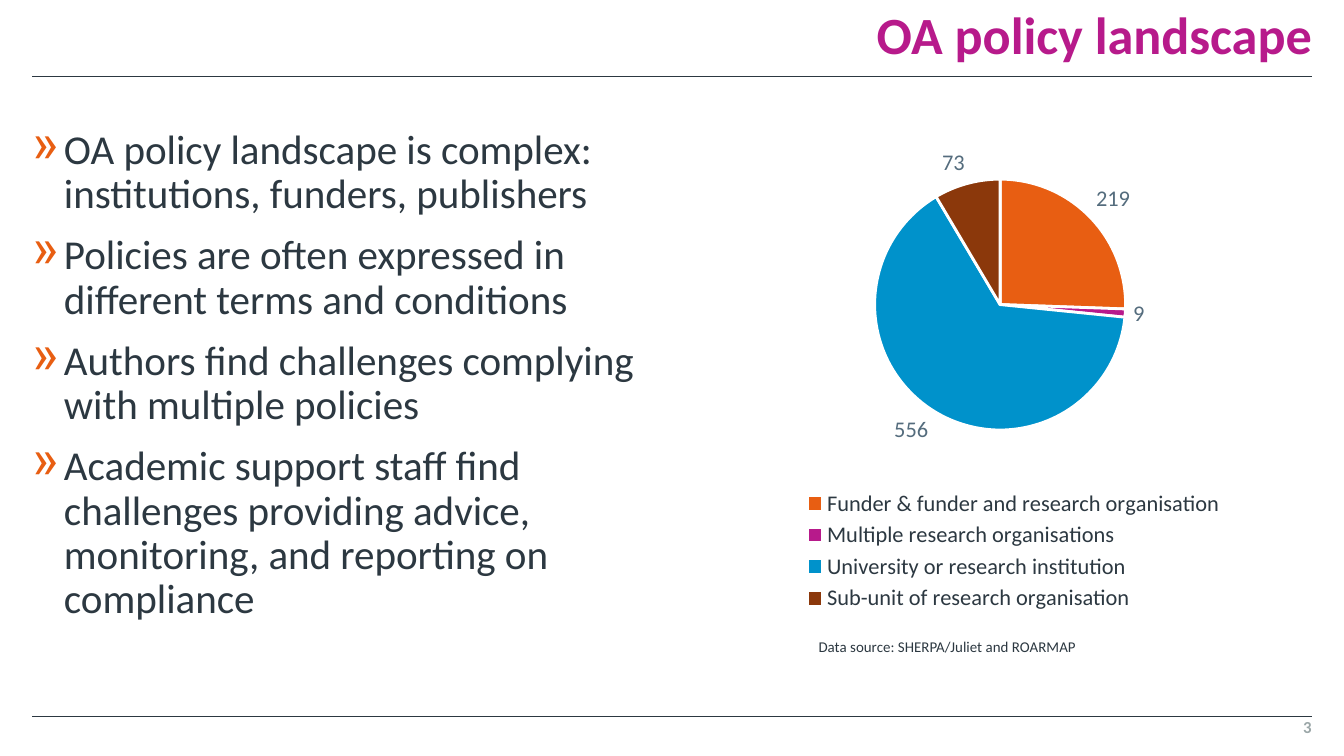
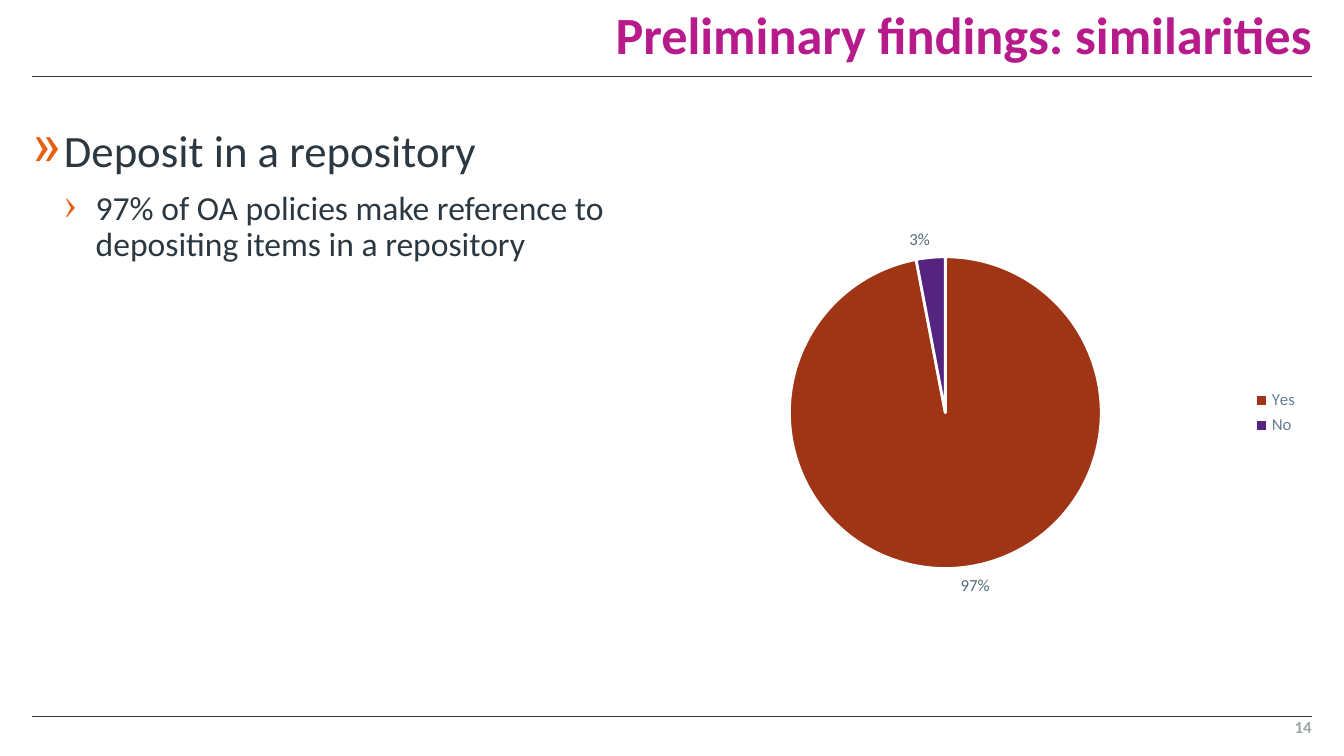
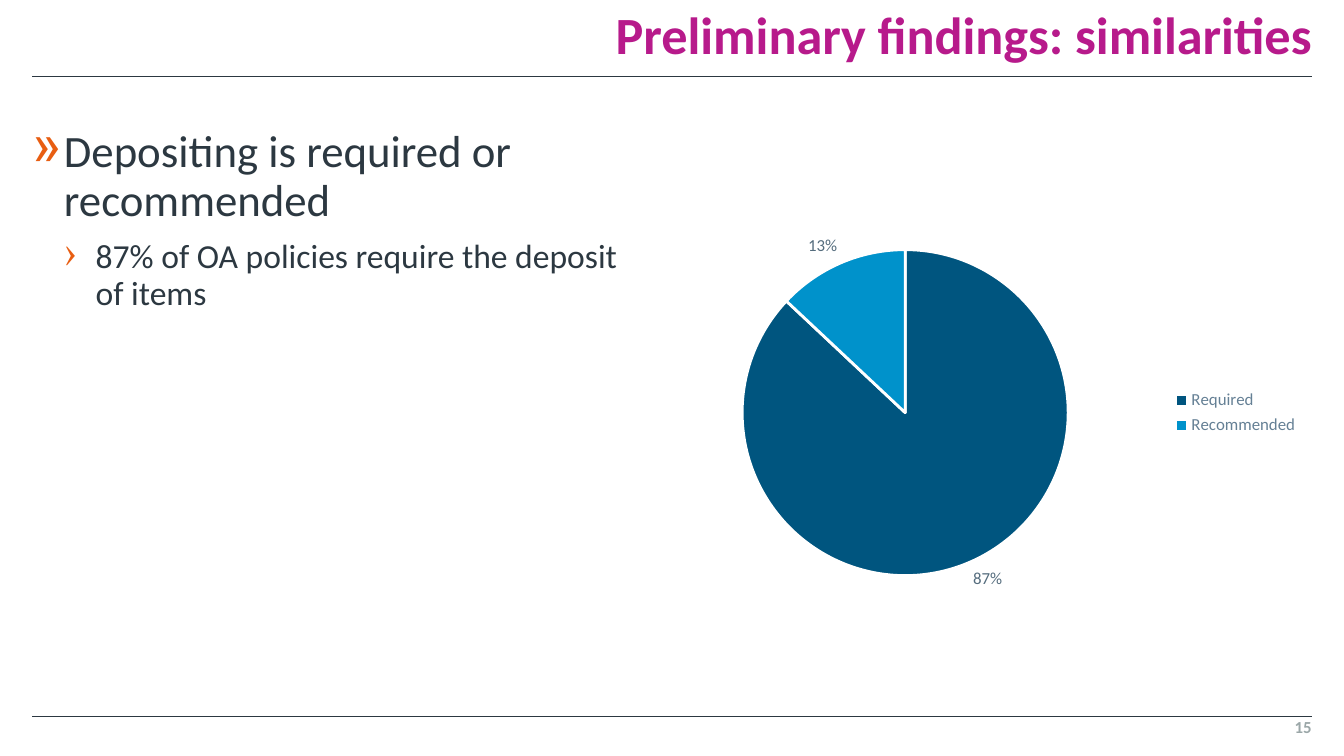
from lxml import etree
from pptx import Presentation
from pptx.chart.data import CategoryChartData
from pptx.dml.color import RGBColor
from pptx.enum.chart import XL_CHART_TYPE, XL_LABEL_POSITION, XL_LEGEND_POSITION
from pptx.enum.shapes import MSO_CONNECTOR
from pptx.enum.text import MSO_ANCHOR, PP_ALIGN
from pptx.oxml.ns import qn
from pptx.util import Cm, Pt

PIE = XL_CHART_TYPE.PIE
OUTSIDE_END = XL_LABEL_POSITION.OUTSIDE_END
LEGEND_BOTTOM = XL_LEGEND_POSITION.BOTTOM
LEGEND_RIGHT = XL_LEGEND_POSITION.RIGHT
STRAIGHT = MSO_CONNECTOR.STRAIGHT
TOP, MIDDLE, BOTTOM = MSO_ANCHOR.TOP, MSO_ANCHOR.MIDDLE, MSO_ANCHOR.BOTTOM
LEFT, RIGHT = PP_ALIGN.LEFT, PP_ALIGN.RIGHT

FONT = "Calibri"
INK, MAGENTA, ORANGE, BLUE = "2C3841", "B71A8B", "E85E12", "0092CB"
BROWN, RUST, PURPLE, NAVY = "8B380B", "9F3515", "552481", "00557F"
LABEL_GREY, LEGEND_GREY, NUMBER_GREY, WHITE = "546C7D", "658095", "9BA7A8", "FFFFFF"
MARGIN_LEFT, MARGIN_RIGHT = 0.61, 24.79
INDENT = 0.6
BULLETS = (("»", 9), ("›", 7.5))
FINDING_CHART = (12.09, 3.99, 12.7, 7.62)


def color(hex_string):
    """Return the colour for a hex string."""
    return RGBColor.from_string(hex_string)


def set_font(font, size, hex_string, bold=False):
    """Apply the deck font with a size, colour and weight."""
    font.name = FONT
    font.size = Pt(size)
    font.bold = bold
    font.color.rgb = color(hex_string)


def write(paragraph, text, size=22, hex_string=INK, bold=False, align=LEFT, spacing=0.9):
    """Fill a paragraph with formatted text."""
    paragraph.alignment = align
    paragraph.line_spacing = spacing
    run = paragraph.add_run()
    run.text = text
    set_font(run.font, size, hex_string, bold)


def add_bullet(paragraph, level):
    """Give a paragraph the hanging bullet of its level."""
    properties = paragraph._p.get_or_add_pPr()
    properties.set("marL", str(Cm(INDENT * (level + 1))))
    properties.set("indent", str(-Cm(INDENT)))
    bullet_color = etree.SubElement(properties, qn("a:buClr"))
    etree.SubElement(bullet_color, qn("a:srgbClr"), val=ORANGE)
    etree.SubElement(properties, qn("a:buSzPct"), val="120000")
    etree.SubElement(properties, qn("a:buChar"), char=BULLETS[level][0])


def set_layout(element, index, box, inner=False):
    """Place a chart part by fractions of the chart's size."""
    for old_layout in element.findall(qn("c:layout")):
        element.remove(old_layout)
    layout = etree.Element(qn("c:layout"))
    manual = etree.SubElement(layout, qn("c:manualLayout"))
    if inner:
        etree.SubElement(manual, qn("c:layoutTarget"), val="inner")
    for name in ("xMode", "yMode"):
        etree.SubElement(manual, qn(f"c:{name}"), val="edge")
    for name, value in zip("xywh", box):
        etree.SubElement(manual, qn(f"c:{name}"), val=str(value))
    element.insert(index, layout)


class Deck:
    """Holds the shared style and the current slide."""

    def __init__(self):
        """Start an empty widescreen presentation."""
        self.presentation = Presentation()
        self.presentation.slide_width = Cm(25.4)
        self.presentation.slide_height = Cm(14.29)
        self.slide = None

    def add_slide(self, title, number):
        """Add a slide with its rules, title and number."""
        self.slide = self.presentation.slides.add_slide(self.presentation.slide_layouts[6])
        self.rule(1.45)
        self.rule(13.54)
        self.text((7.7, 0, 17.09, 1.24), title, anchor=BOTTOM,
                  size=28, hex_string=MAGENTA, bold=True, align=RIGHT)
        self.text((22.79, 13.54, 2, 0.46), str(number), size=9,
                  hex_string=NUMBER_GREY, bold=True, align=RIGHT, spacing=1.0)

    def rule(self, top):
        """Draw a thin line between the margins."""
        connector = self.slide.shapes.add_connector(
            STRAIGHT, Cm(MARGIN_LEFT), Cm(top), Cm(MARGIN_RIGHT), Cm(top))
        connector.line.color.rgb = color(INK)
        connector.line.width = Pt(0.5)
        etree.SubElement(connector._element.spPr, qn("a:effectLst"))

    def frame(self, box, anchor=TOP, insets=(0, 0)):
        """Add an empty wrapping text box and return its text frame."""
        frame = self.slide.shapes.add_textbox(*map(Cm, box)).text_frame
        frame.word_wrap = True
        frame.vertical_anchor = anchor
        frame.margin_left = frame.margin_right = Cm(insets[0])
        frame.margin_top = frame.margin_bottom = Cm(insets[1])
        return frame

    def text(self, box, text, anchor=TOP, insets=(0, 0), **text_format):
        """Add a text box with one paragraph."""
        write(self.frame(box, anchor, insets).paragraphs[0], text, **text_format)

    def bullets(self, items):
        """Add the body list from (level, size, text) items."""
        frame = self.frame((MARGIN_LEFT, 2.44, 11.4, 10.69))
        for index, (level, size, text) in enumerate(items):
            paragraph = frame.add_paragraph() if index else frame.paragraphs[0]
            paragraph.level = level
            add_bullet(paragraph, level)
            if index:
                paragraph.space_before = Pt(BULLETS[level][1])
            write(paragraph, text, size=size)

    def pie(self, box, slices, size=9, percent=True, legend_position=LEGEND_RIGHT,
            legend_color=LEGEND_GREY, plot_box=None, legend_box=None):
        """Add a pie chart from (name, value, colour) slices."""
        data = CategoryChartData()
        data.categories = [name for name, _, _ in slices]
        data.add_series("Series 1", [value for _, value, _ in slices])
        chart = self.slide.shapes.add_chart(PIE, *map(Cm, box), data).chart
        chart.has_title = False
        set_font(chart.font, 10, INK)
        chart.has_legend = True
        legend = chart.legend
        legend.position = legend_position
        legend.include_in_layout = False
        set_font(legend.font, size, legend_color)

        plot = chart.plots[0]
        plot.vary_by_categories = True
        for index, (_, _, slice_color) in enumerate(slices):
            point_format = plot.series[0].points[index].format
            point_format.fill.solid()
            point_format.fill.fore_color.rgb = color(slice_color)
            point_format.line.color.rgb = color(WHITE)
            point_format.line.width = Pt(1.5)
        labels = plot.series[0].data_labels
        labels.show_value = not percent
        labels.show_percentage = percent
        labels.number_format = "0%" if percent else "General"
        labels.number_format_is_linked = False
        labels.position = OUTSIDE_END
        set_font(labels.font, size, LABEL_GREY)

        if plot_box:
            set_layout(chart._chartSpace.chart.plotArea, 0, plot_box, inner=True)
        if legend_box:
            set_layout(legend._element, 1, legend_box)


def main():
    """Build the three slides."""
    deck = Deck()

    deck.add_slide("OA policy landscape", 3)
    deck.bullets([(0, 22, text) for text in (
        "OA policy landscape is complex: institutions, funders, publishers",
        "Policies are often expressed in different terms and conditions",
        "Authors find challenges complying with multiple policies",
        "Academic support staff find challenges providing advice, monitoring, "
        "and reporting on compliance",
    )])
    deck.pie((13.79, 2.44, 10.54, 9.22), [
        ("Funder & funder and research organisation", 219, ORANGE),
        ("Multiple research organisations", 9, MAGENTA),
        ("University or research institution", 556, BLUE),
        ("Sub-unit of research organisation", 73, BROWN),
    ], size=12, percent=False, legend_position=LEGEND_BOTTOM, legend_color=INK,
        plot_box=(0.26, 0.1, 0.45, 0.52), legend_box=(0.12, 0.73, 0.78, 0.27))
    deck.text((15.27, 11.96, 9.53, 0.53), "Data source: SHERPA/Juliet and ROARMAP",
              anchor=MIDDLE, insets=(0.2, 0.1), size=8, spacing=1.0)

    findings = (
        (14, "Deposit in a repository",
         "97% of OA policies make reference to depositing items in a repository",
         [("Yes", 97, RUST), ("No", 3, PURPLE)]),
        (15, "Depositing is required or recommended",
         "87% of OA policies require the deposit of items",
         [("Required", 87, NAVY), ("Recommended", 13, BLUE)]),
    )
    for number, heading, detail, slices in findings:
        deck.add_slide("Preliminary findings: similarities", number)
        deck.bullets([(0, 24, heading), (1, 18, detail)])
        deck.pie(FINDING_CHART, slices)

    deck.presentation.save("out.pptx")


if __name__ == "__main__":
    main()
